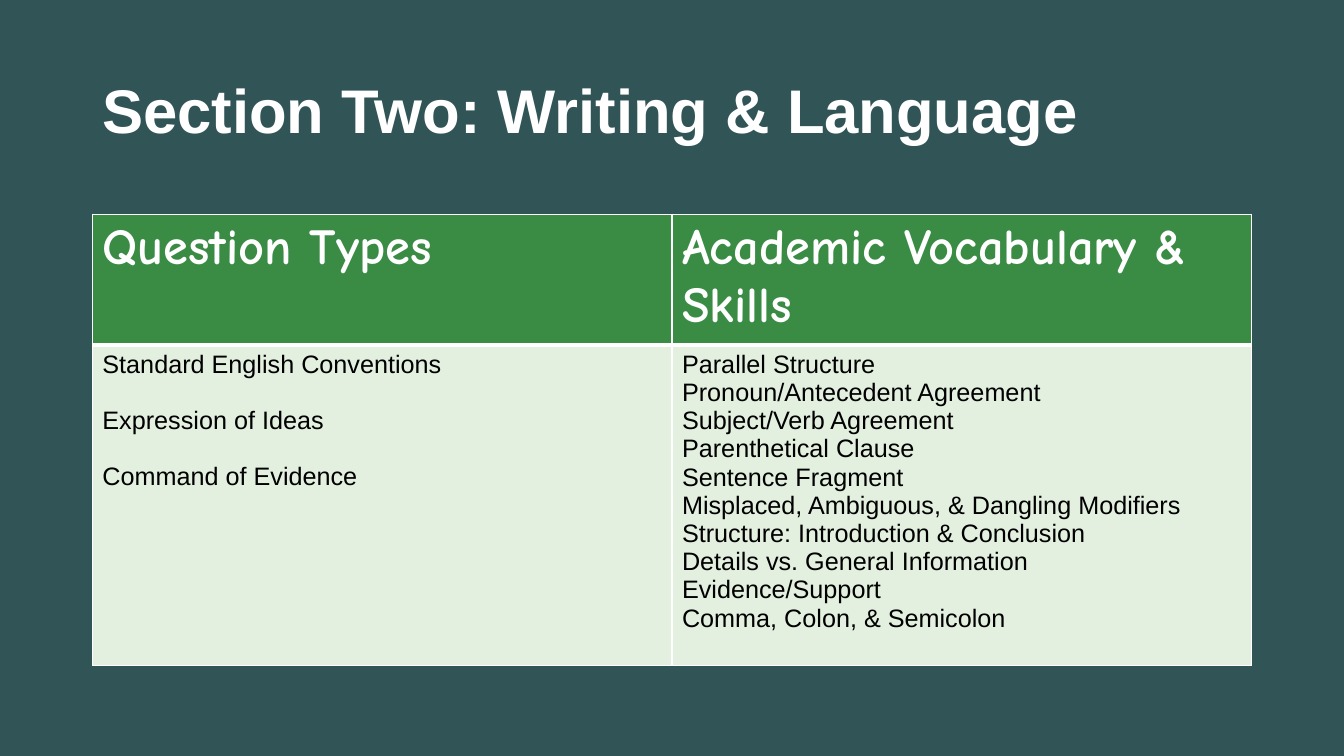
from lxml.etree import SubElement
from pptx import Presentation
from pptx.dml.color import RGBColor
from pptx.enum.text import MSO_ANCHOR as Anchor
from pptx.oxml.ns import qn
from pptx.util import Pt

QUESTION_TYPES = ["Standard English Conventions", "Expression of Ideas", "Command of Evidence"]
SKILLS = [
    "Parallel Structure",
    "Pronoun/Antecedent Agreement",
    "Subject/Verb Agreement",
    "Parenthetical Clause",
    "Sentence Fragment",
    "Misplaced, Ambiguous, & Dangling Modifiers",
    "Structure: Introduction & Conclusion",
    "Details vs. General Information",
    "Evidence/Support",
    "Comma, Colon, & Semicolon",
]


def color(value):
    return RGBColor.from_string(value)


class SlideBuilder:
    """Hold the deck style and add elements to the current slide."""

    background = "315457"
    white = "FFFFFF"
    black = "000000"
    header_fill = "3A8C45"
    body_fill = "E3F0DF"
    body_font = "Arial"
    header_font = "Comic Neue"

    def __init__(self, presentation):
        self.slide = presentation.slides.add_slide(presentation.slide_layouts[6])
        fill = self.slide.background.fill
        fill.solid()
        fill.fore_color.rgb = color(self.background)

    def add_lines(self, frame, lines, size, font, ink, bold=False, gap=0):
        for index, line in enumerate(lines):
            paragraph = frame.add_paragraph() if index else frame.paragraphs[0]
            if index and gap:
                paragraph.space_before = Pt(gap)
            run = paragraph.add_run()
            run.text = line
            run.font.size = Pt(size)
            run.font.name = font
            run.font.bold = bold
            run.font.color.rgb = color(ink)

    def title(self, text, left, top, width, height):
        frame = self.slide.shapes.add_textbox(Pt(left), Pt(top), Pt(width), Pt(height)).text_frame
        frame.word_wrap = True
        frame.vertical_anchor = Anchor.MIDDLE
        self.add_lines(frame, [text], 44, self.body_font, self.white, bold=True)
        frame.paragraphs[0].line_spacing = 0.9

    def borders(self, cell, **widths):
        properties = cell._tc.get_or_add_tcPr()
        for side in "LRTB":
            line = SubElement(properties, qn(f"a:ln{side}"), w=str(Pt(widths.get(side, 1))))
            fill = SubElement(line, qn("a:solidFill"))
            SubElement(fill, qn("a:srgbClr"), val=self.white)

    def fill_cell(self, cell, value):
        cell.fill.solid()
        cell.fill.fore_color.rgb = color(value)

    def table(self, columns, left, top, width, heights):
        frame = self.slide.shapes.add_table(
            2, len(columns), Pt(left), Pt(top), Pt(width), Pt(sum(heights)))
        table = frame.table
        for row, height in zip(table.rows, heights):
            row.height = Pt(height)
        for index, (heading, lines, gap) in enumerate(columns):
            table.columns[index].width = Pt(width / len(columns))
            header, body = table.cell(0, index), table.cell(1, index)
            self.borders(header, B=3)
            self.borders(body, T=3)
            self.fill_cell(header, self.header_fill)
            self.fill_cell(body, self.body_fill)
            self.add_lines(header.text_frame, [heading], 36, self.header_font, self.white, bold=True)
            self.add_lines(body.text_frame, lines, 18, self.body_font, self.black, gap=gap)


def main():
    presentation = Presentation()
    presentation.slide_width, presentation.slide_height = Pt(960), Pt(540)
    builder = SlideBuilder(presentation)
    builder.title("Section Two: Writing & Language", 66, 28.75, 828, 104.4)
    columns = [
        ("Question Types", QUESTION_TYPES, 20.1),
        ("Academic Vocabulary & Skills", SKILLS, 0),
    ]
    builder.table(columns, 66, 153, 828, [90.5, 228.5])
    presentation.save("out.pptx")


if __name__ == "__main__":
    main()
